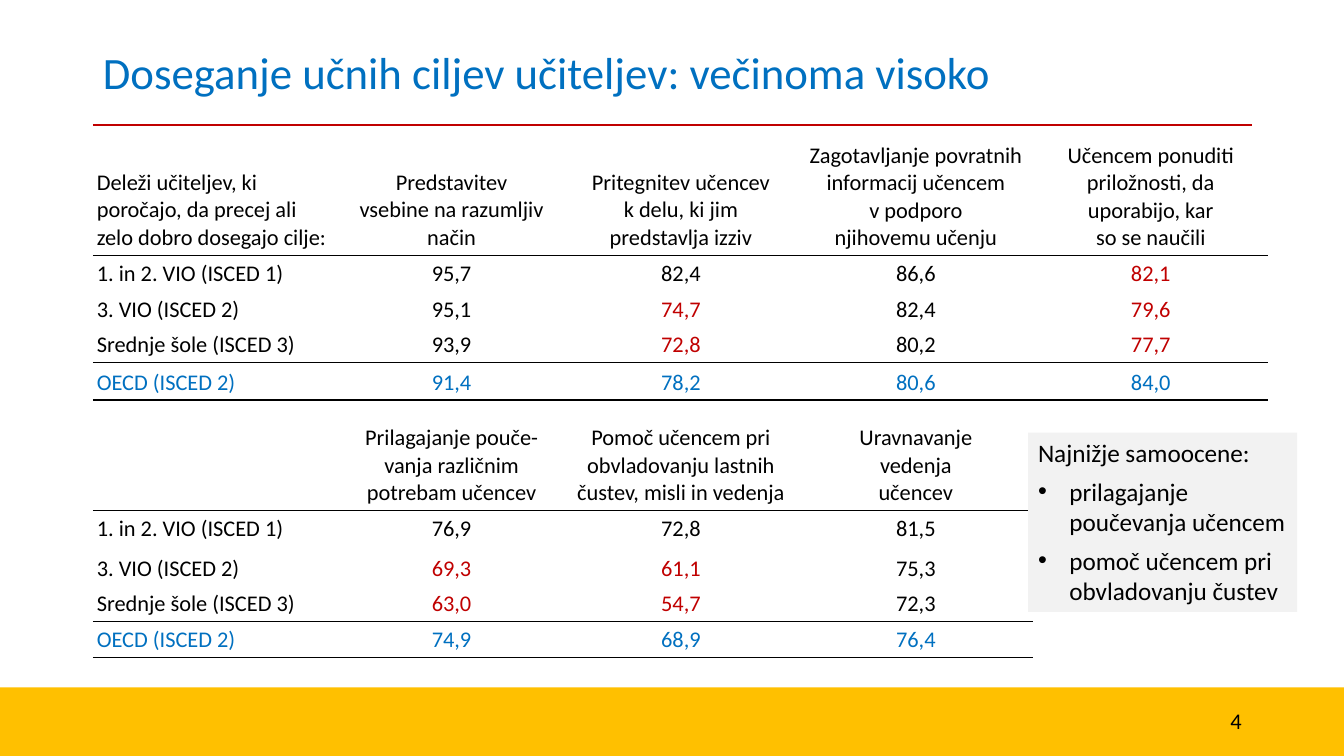
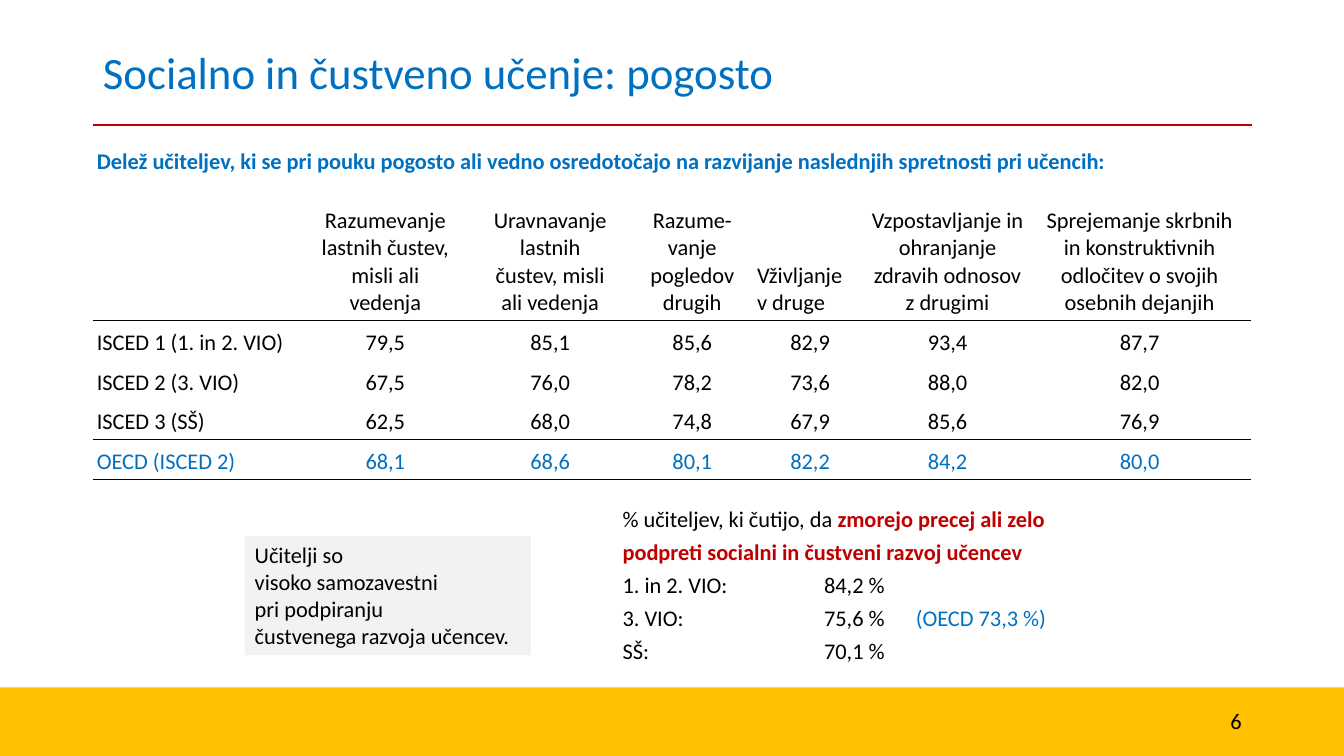
from lxml.etree import SubElement
from pptx import Presentation
from pptx.dml.color import RGBColor
from pptx.enum.shapes import MSO_CONNECTOR, MSO_SHAPE
from pptx.enum.text import MSO_ANCHOR, PP_ALIGN
from pptx.oxml.ns import qn
from pptx.util import Cm, Pt

BLUE, RED, BLACK = "0070C0", "C00000", "000000"
GOLD, GREY = "FFC000", "F2F2F2"
FONT = "Calibri"
WIDE, HIGH = 33.87, 19.05
LEFT, SPAN = 2.34, 29.2
BAND = 17.32
PLAIN = "{2D5ABB26-0587-4C30-8999-92F81FD0307C}"

# In table rows a final "!" marks a red value; None is a cell without a line.
GOALS = [
    ["Deleži učiteljev, ki poročajo, da precej ali zelo dobro dosegajo cilje:",
     "Predstavitev\nvsebine na razumljiv način",
     "Pritegnitev učencev\nk delu, ki jim\npredstavlja izziv",
     "Zagotavljanje povratnih informacij učencem\nv podporo\nnjihovemu učenju",
     "Učencem ponuditi priložnosti, da\nuporabijo, kar\nso se naučili"],
    ["1. in 2. VIO (ISCED 1)", "95,7", "82,4", "86,6", "82,1!"],
    ["3. VIO (ISCED 2)", "95,1", "74,7!", "82,4", "79,6!"],
    ["Srednje šole (ISCED 3)", "93,9", "72,8!", "80,2", "77,7!"],
    ["OECD (ISCED 2)", "91,4", "78,2", "80,6", "84,0"],
    ["", "Prilagajanje pouče-vanja različnim potrebam učencev",
     "Pomoč učencem pri obvladovanju lastnih čustev, misli in vedenja",
     "Uravnavanje\nvedenja\nučencev", None],
    ["1. in 2. VIO (ISCED 1)", "76,9", "72,8", "81,5", None],
    ["3. VIO (ISCED 2)", "69,3!", "61,1!", "75,3", None],
    ["Srednje šole (ISCED 3)", "63,0!", "54,7!", "72,3", None],
    ["OECD (ISCED 2)", "74,9", "68,9", "76,4", None],
]
SKILLS = [
    ["Delež učiteljev, ki se pri pouku pogosto ali vedno osredotočajo "
     "na razvijanje naslednjih spretnosti pri učencih:"],
    ["", "Razumevanje lastnih čustev, misli ali\nvedenja",
     "Uravnavanje lastnih\nčustev, misli\nali vedenja",
     "Razume-vanje pogledov drugih", "Vživljanje\nv druge",
     "Vzpostavljanje in ohranjanje zdravih odnosov z drugimi",
     "Sprejemanje skrbnih\nin konstruktivnih odločitev o svojih osebnih dejanjih"],
    ["ISCED 1 (1. in 2. VIO)", "79,5", "85,1", "85,6", "82,9", "93,4", "87,7"],
    ["ISCED 2 (3. VIO)", "67,5", "76,0", "78,2", "73,6", "88,0", "82,0"],
    ["ISCED 3 (SŠ)", "62,5", "68,0", "74,8", "67,9", "85,6", "76,9"],
    ["OECD (ISCED 2)", "68,1", "68,6", "80,1", "82,2", "84,2", "80,0"],
]


def rgb(tint):
    return RGBColor.from_string(tint)


def style(par, size=16, tint=BLACK, bold=False, align=PP_ALIGN.LEFT):
    par.alignment = align
    font = par.font
    font.name, font.size, font.bold = FONT, Pt(size), bold
    font.color.rgb = rgb(tint)


def write(frame, lines, **look):
    """Put plain lines into a frame, all in one look."""
    frame.word_wrap = True
    frame.text = "\n".join(lines)
    for par in frame.paragraphs:
        style(par, **look)


def bullet(par, hang):
    props = par._p.get_or_add_pPr()
    props.set("marL", str(Cm(hang)))
    props.set("indent", str(-Cm(hang)))
    SubElement(props, qn("a:buFont"), typeface="Arial")
    SubElement(props, qn("a:buChar"), char="•")


def stops(par, *places):
    """Set left tab stops, in centimetres."""
    tabs = SubElement(par._p.get_or_add_pPr(), qn("a:tabLst"))
    for place in places:
        SubElement(tabs, qn("a:tab"), pos=str(Cm(place)), algn="l")


def panel(slide, box, tint):
    shape = slide.shapes.add_shape(MSO_SHAPE.RECTANGLE, *map(Cm, box))
    shape.shadow.inherit = False
    shape.fill.solid()
    shape.fill.fore_color.rgb = rgb(tint)
    shape.line.fill.background()
    return shape


def frame(deck, layout):
    """Give the layout its title place, bottom band and red rule."""
    title = layout.placeholders[0]
    title.left, title.top = Cm(LEFT), Cm(1.02)
    title.width, title.height = Cm(SPAN), Cm(1.73)
    slide = deck.slides[0]
    band = panel(slide, (0, BAND, WIDE, HIGH - BAND), GOLD)
    rule = slide.shapes.add_connector(
        MSO_CONNECTOR.STRAIGHT, Cm(LEFT), Cm(3.15), Cm(LEFT + SPAN), Cm(3.15))
    rule.line.color.rgb = rgb(RED)
    rule.line.width = Pt(2)
    SubElement(rule._element.spPr, qn("a:effectLst"))
    for part in (band, rule):
        layout.shapes._spTree.append(part._element)


def head(slide, title, number):
    text = slide.shapes.title.text_frame
    write(text, [title], size=32, tint=BLUE)
    text.paragraphs[0].line_spacing = 0.9
    text.vertical_anchor = MSO_ANCHOR.MIDDLE
    box = slide.shapes.add_textbox(Cm(29.31), Cm(17.65), Cm(2.23), Cm(1.02))
    write(box.text_frame, [number], align=PP_ALIGN.RIGHT)
    box.text_frame.vertical_anchor = MSO_ANCHOR.MIDDLE


def under(cell):
    """Draw a thin line below a cell."""
    line = SubElement(cell._tc.get_or_add_tcPr(), qn("a:lnB"), w=str(Pt(1)))
    SubElement(SubElement(line, qn("a:solidFill")), qn("a:srgbClr"), val=BLACK)


def fill(cell, text, tint, bold, align, lined):
    cell.margin_left = cell.margin_right = Cm(0.1)
    cell.margin_top = cell.margin_bottom = Cm(0.1)
    cell.vertical_anchor = MSO_ANCHOR.BOTTOM
    if lined:
        under(cell)
    cell.fill.background()
    if text:
        tint = RED if text.endswith("!") else tint
        write(cell.text_frame, text.rstrip("!").split("\n"),
              tint=tint, bold=bold, align=align)
    else:
        par = cell.text_frame.paragraphs[0]
        par._p.get_or_add_endParaRPr().set("sz", "1600")


def grid(slide, top, rows, widths, heights, heads):
    """Table with lines below its heads and around each OECD row."""
    table = slide.shapes.add_table(
        len(rows), len(widths), Cm(LEFT), Cm(top),
        Cm(sum(widths)), Cm(sum(heights))).table
    table.first_row = table.horz_banding = False
    table._tbl.tblPr.find(qn("a:tableStyleId")).text = PLAIN
    for col, width in zip(table.columns, widths):
        col.width = Cm(width)
    for line, height in zip(table.rows, heights):
        line.height = Cm(height)
    mean = [i for i, row in enumerate(rows) if row[0].startswith("OECD")]
    ruled = {*heads, *mean, *(i - 1 for i in mean)}
    for i, row in enumerate(rows):
        whole = len(row) == 1
        tint = BLUE if whole or i in mean else BLACK
        for j in range(len(widths)):
            text = row[j] if j < len(row) else ""
            left = j == 0 or text == "Vživljanje\nv druge"
            fill(table.cell(i, j), text, tint, whole,
                 PP_ALIGN.LEFT if left else PP_ALIGN.CENTER,
                 i in ruled and text is not None)
        if whole:
            table.cell(i, 0).merge(table.cell(i, len(widths) - 1))


def note(slide, box, lines, size, listed=False):
    """Grey note; with listed, all lines after the first get bullets."""
    text = panel(slide, box, GREY).text_frame
    text.text = "\n".join(lines)
    text.word_wrap = True
    text.vertical_anchor = MSO_ANCHOR.TOP
    for i, par in enumerate(text.paragraphs):
        if listed and i:
            bullet(par, 0.79)
            par.space_before = Pt(6)
        style(par, size)


def shares(slide, box):
    text = slide.shapes.add_textbox(*map(Cm, box)).text_frame
    text.word_wrap = True
    lines = [
        [("% učiteljev, ki čutijo, da ", BLACK),
         ("zmorejo precej ali zelo podpreti socialni in čustveni razvoj učencev", RED)],
        [("1. in 2. VIO:\t84,2 %", BLACK)],
        [("3. VIO:\t75,6 %\t", BLACK), ("(OECD 73,3 %)", BLUE)],
        [("SŠ:\t70,1 %", BLACK)],
    ]
    for i, line in enumerate(lines):
        par = text.add_paragraph() if i else text.paragraphs[0]
        stops(par, 5.08, 7.39)
        par.line_spacing = Pt(23.6)
        style(par)
        for words, tint in line:
            run = par.add_run()
            run.text = words
            if tint != BLACK:
                run.font.color.rgb = rgb(tint)
                run.font.bold = tint == RED


def goals(slide):
    head(slide, "Doseganje učnih ciljev učiteljev: večinoma visoko", "4")
    grid(slide, 3.48, GOALS, [6.22, 5.64] + [5.92] * 3,
         [2.95, 0.91, 0.9, 0.9, 0.94, 2.79, 0.9, 1, 0.9, 0.9], {0, 5})
    note(slide, (25.91, 10.9, 6.78, 4.52),
         ["Najnižje samoocene:", "prilagajanje poučevanja učencem",
          "pomoč učencem pri obvladovanju čustev"], 18, listed=True)


def skills(slide):
    head(slide, "Socialno in čustveno učenje: pogosto", "6")
    grid(slide, 3.61, SKILLS, [5.26, 4.22, 4.09, 3.07, 2.87, 4.06, 5.62],
         [0.91, 3.56] + [1] * 4, {1})
    note(slide, (6.17, 13.51, 7.21, 3),
         ["Učitelji so", "visoko samozavestni", "pri podpiranju",
          "čustvenega razvoja učencev."], 16)
    shares(slide, (15.44, 12.45, 12.24, 4.47))


def main():
    deck = Presentation()
    deck.slide_width, deck.slide_height = Cm(WIDE), Cm(HIGH)
    layout = deck.slide_layouts.get_by_name("Title Only")
    pages = [deck.slides.add_slide(layout) for _ in range(2)]
    frame(deck, layout)
    goals(pages[0])
    skills(pages[1])
    deck.save("out.pptx")


if __name__ == "__main__":
    main()
